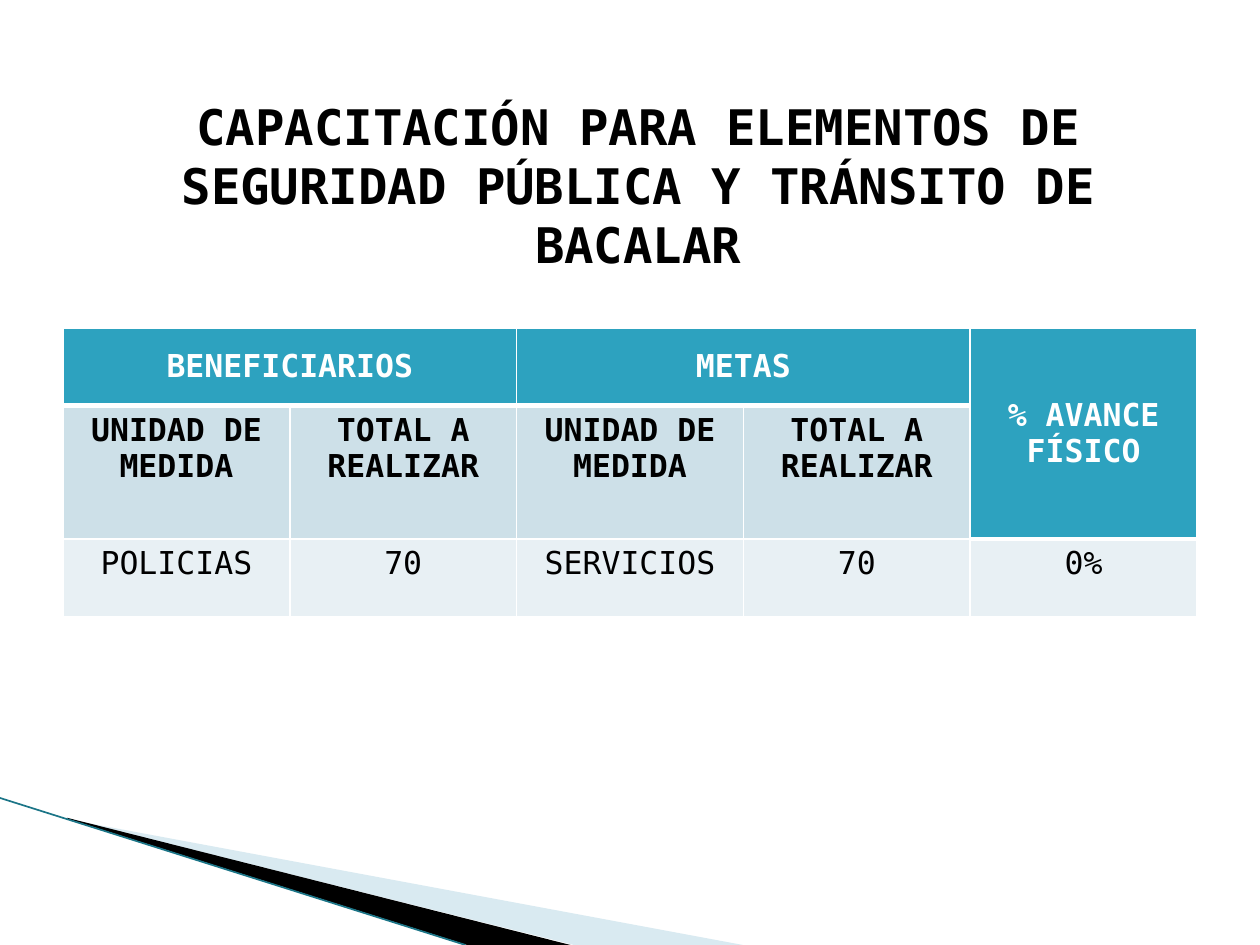
"""Build the training progress slide for the Bacalar public safety staff."""
from lxml import etree
from pptx import Presentation
from pptx.dml.color import RGBColor
from pptx.enum.shapes import MSO_CONNECTOR
from pptx.enum.text import MSO_ANCHOR, MSO_AUTO_SIZE, PP_ALIGN
from pptx.oxml.ns import qn
from pptx.util import Pt


def rgb(value):
    return RGBColor.from_string(value)


def add_text(tf, text, size, color, bold):
    p = tf.paragraphs[0]
    p.alignment = PP_ALIGN.CENTER
    r = p.add_run()
    r.text = text
    r.font.name = "DejaVu Sans Mono"
    r.font.size = Pt(size)
    r.font.bold = bold
    r.font.color.rgb = rgb(color)


prs = Presentation()
prs.slide_width, prs.slide_height = Pt(720), Pt(540)
s = prs.slides.add_slide(prs.slide_layouts[5])

wedges = [
    ([(39.6, 468.4), (424.5, 540), (328, 540), (39.6, 468)], "A0CBDC", 40),
    ([(38.2, 467.3), (326, 540), (267, 540), (38.9, 468)], "000000", 100),
]
for points, color, alpha in wedges:
    corners = [(Pt(x), Pt(y)) for x, y in points]
    builder = s.shapes.build_freeform(*corners[0])
    builder.add_line_segments(corners[1:])
    sp = builder.convert_to_shape()
    sp.shadow.inherit = False
    sp.fill.solid()
    sp.fill.fore_color.rgb = rgb(color)
    sp.line.fill.background()
    if alpha < 100:
        clr = sp.fill._xPr.find(".//" + qn("a:srgbClr"))
        etree.SubElement(clr, qn("a:alpha"), val=str(alpha * 1000))

edge = s.shapes.add_connector(MSO_CONNECTOR.STRAIGHT, Pt(0), Pt(456), Pt(266), Pt(540))
edge.line.color.rgb = rgb("1B7587")
edge.line.width = Pt(0.95)
etree.SubElement(edge._element.spPr, qn("a:effectLst"))

title = s.shapes.title
title.left, title.top, title.width, title.height = Pt(68.4), Pt(49), Pt(592.6), Pt(113)
tf = title.text_frame
tf.word_wrap = True
tf.auto_size = MSO_AUTO_SIZE.NONE
tf.vertical_anchor = MSO_ANCHOR.MIDDLE
add_text(tf, "CAPACITACIÓN PARA ELEMENTOS DE SEGURIDAD PÚBLICA Y TRÁNSITO DE BACALAR",
         28, "000000", True)

rows = [
    ["BENEFICIARIOS", "", "METAS", "", "% AVANCE FÍSICO"],
    ["UNIDAD DE MEDIDA", "TOTAL A REALIZAR"] * 2 + [""],
    ["POLICIAS", "70", "SERVICIOS", "70", "0%"],
]
heights = [44.4, 76.2, 44.4]
fills = ["2DA2BF", "CDE0E8", "E8F0F4"]
table = s.shapes.add_table(3, 5, Pt(36), Pt(187.4), Pt(648), Pt(sum(heights))).table
for column in table.columns:
    column.width = Pt(129.6)
for i, texts in enumerate(rows):
    table.rows[i].height = Pt(heights[i])
    for j, text in enumerate(texts):
        cell = table.cell(i, j)
        header = i == 0 or (i == 1 and j == 4)
        header_end = 1 if j == 4 else 0
        tcPr = cell._tc.get_or_add_tcPr()
        for side in "LRTB":
            thick = (side == "B" and i == header_end) or (side == "T" and i == header_end + 1)
            ln = etree.SubElement(tcPr, qn(f"a:ln{side}"), w=str(Pt(3 if thick else 1)))
            fill = etree.SubElement(ln, qn("a:solidFill"))
            etree.SubElement(fill, qn("a:srgbClr"), val="FFFFFF")
        cell.fill.solid()
        cell.fill.fore_color.rgb = rgb(fills[0] if header else fills[i])
        cell.vertical_anchor = MSO_ANCHOR.MIDDLE if header else MSO_ANCHOR.TOP
        if text:
            add_text(cell.text_frame, text, 18, "FFFFFF" if header else "000000", i < 2)
for first, last in [((0, 0), (0, 1)), ((0, 2), (0, 3)), ((0, 4), (1, 4))]:
    table.cell(*first).merge(table.cell(*last))

prs.save("out.pptx")
